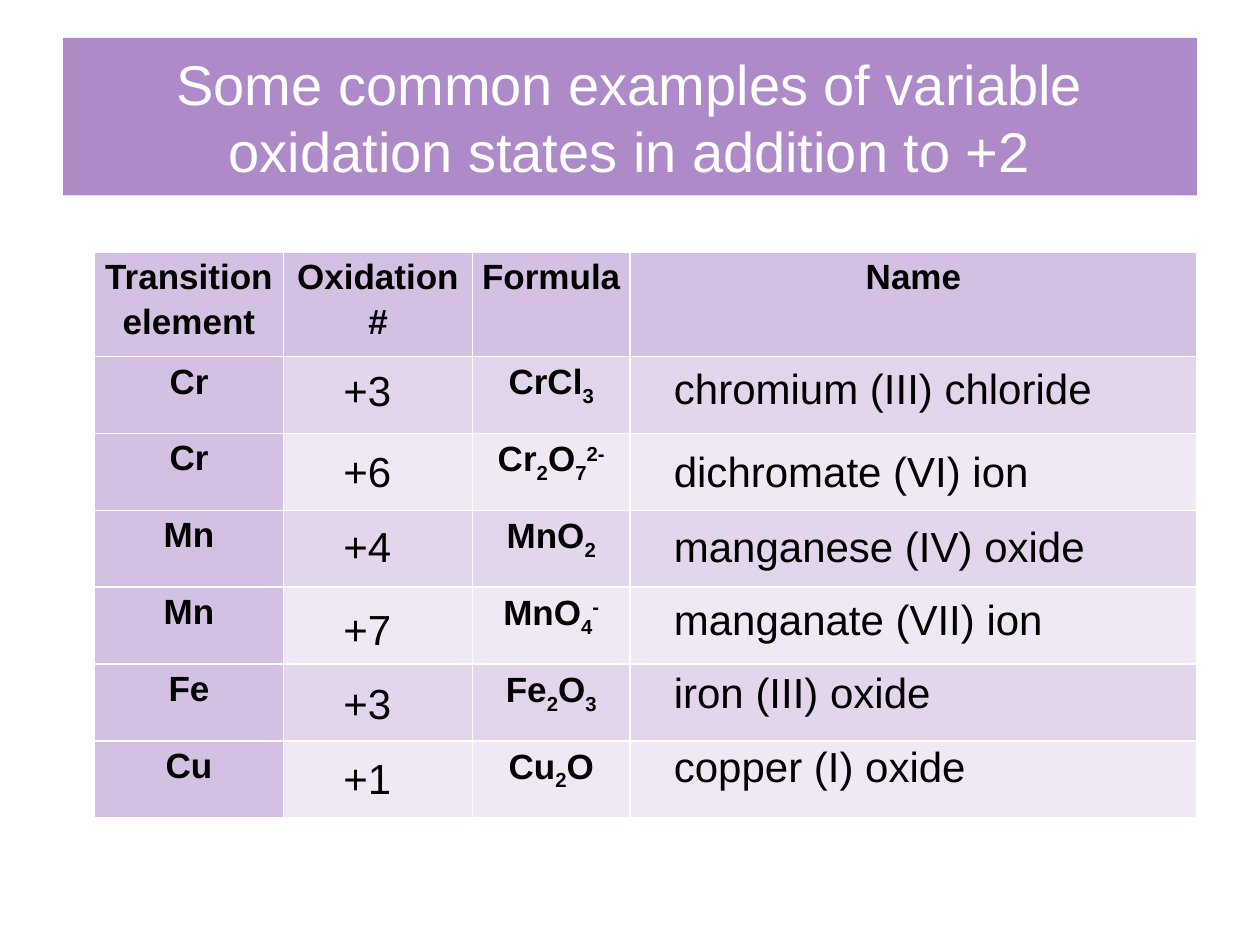
from lxml import etree
from pptx import Presentation
from pptx.dml.color import RGBColor
from pptx.enum.text import MSO_ANCHOR, MSO_AUTO_SIZE, PP_ALIGN
from pptx.oxml.ns import qn
from pptx.util import Inches, Pt

CENTER, LEFT = PP_ALIGN.CENTER, PP_ALIGN.LEFT
MIDDLE = MSO_ANCHOR.MIDDLE
NO_FIT, GROW = MSO_AUTO_SIZE.NONE, MSO_AUTO_SIZE.SHAPE_TO_FIT_TEXT
PURPLE, WHITE, BLACK = "7030A0", "FFFFFF", "000000"
SUB, SUP = -25, 30


def tint(fill, color, percent):
    fill.solid()
    fill.fore_color.rgb = RGBColor.from_string(color)
    clr = fill._xPr.find(qn("a:solidFill"))[0]
    etree.SubElement(clr, qn("a:alpha")).set("val", str(percent * 1000))


def add_run(p, text, size, color, bold=False, base=0):
    r = p.add_run()
    r.text = text
    r.font.name = "Arial"
    r.font.size = Pt(size)
    r.font.bold = bold
    r.font.color.rgb = RGBColor.from_string(color)
    if base:
        r._r.get_or_add_rPr().set("baseline", str(base * 1000))


prs = Presentation()
prs.slide_width, prs.slide_height = Inches(10), Inches(7.5)
s = prs.slides.add_slide(prs.slide_layouts[5])

title = s.shapes.title
title.left, title.top = Inches(0.5), Inches(0.3)
title.width, title.height = Inches(9), Inches(1.25)
tint(title.fill, PURPLE, 56)
tf = title.text_frame
tf.auto_size = NO_FIT
tf.vertical_anchor = MIDDLE
p = tf.paragraphs[0]
p.alignment = CENTER
add_run(p, "Some common examples of variable oxidation states in addition to +2", 32, WHITE)

headers = ["Transition element", "Oxidation #", "Formula", "Name"]
compounds = [
    ("Cr", "+3", [("CrCl", 0), ("3", SUB)], "chromium (III) chloride"),
    ("Cr", "+6", [("Cr", 0), ("2", SUB), ("O", 0), ("7", SUB), ("2-", SUP)], "dichromate (VI) ion"),
    ("Mn", "+4", [("MnO", 0), ("2", SUB)], "manganese (IV) oxide"),
    ("Mn", "+7", [("MnO", 0), ("4", SUB), ("-", SUP)], "manganate (VII) ion"),
    ("Fe", "+3", [("Fe", 0), ("2", SUB), ("O", 0), ("3", SUB)], "iron (III) oxide"),
    ("Cu", "+1", [("Cu", 0), ("2", SUB), ("O", 0)], "copper (I) oxide"),
]
grid = [[[(h, 0)] for h in headers]]
grid += [[[(element, 0)], [], formula, []] for element, state, formula, name in compounds]

table = s.shapes.add_table(len(grid), len(headers), Inches(0.75), Inches(2),
                           Inches(8.75), Inches(4.49)).table
for col, width in zip(table.columns, [1.5, 1.5, 1.25, 4.5]):
    col.width = Inches(width)
for i, row in enumerate(grid):
    table.rows[i].height = Inches(0.61 if i else 0.83)
    for j, runs in enumerate(row):
        cell = table.cell(i, j)
        if i == 0 or j == 0:
            percent = 30
        else:
            percent = 20 if i % 2 else 10
        tint(cell.fill, PURPLE, percent)
        if not runs:
            continue
        cell.margin_left = cell.margin_right = Inches(0.07)
        cell.margin_top = cell.margin_bottom = 0
        p = cell.text_frame.paragraphs[0]
        p.alignment = CENTER
        p.line_spacing = 1.15
        for text, base in runs:
            add_run(p, text, 20, BLACK, True, base)

state_tops = [2.84, 3.49, 4.08, 4.74, 5.33, 5.92]
name_tops = [2.83, 3.49, 4.08, 4.66, 5.24, 5.83]
for (element, state, formula, name), state_top, name_top in zip(compounds, state_tops, name_tops):
    name_width = 4.08 if name == "chromium (III) chloride" else 3.67
    for text, left, top, width, align in [(state, 2.58, state_top, 0.67, CENTER),
                                          (name, 5.25, name_top, name_width, LEFT)]:
        tf = s.shapes.add_textbox(Inches(left), Inches(top), Inches(width), Inches(0.51)).text_frame
        tf.word_wrap = True
        tf.auto_size = GROW
        p = tf.paragraphs[0]
        p.alignment = align
        add_run(p, text, 24, BLACK)

prs.save("out.pptx")
